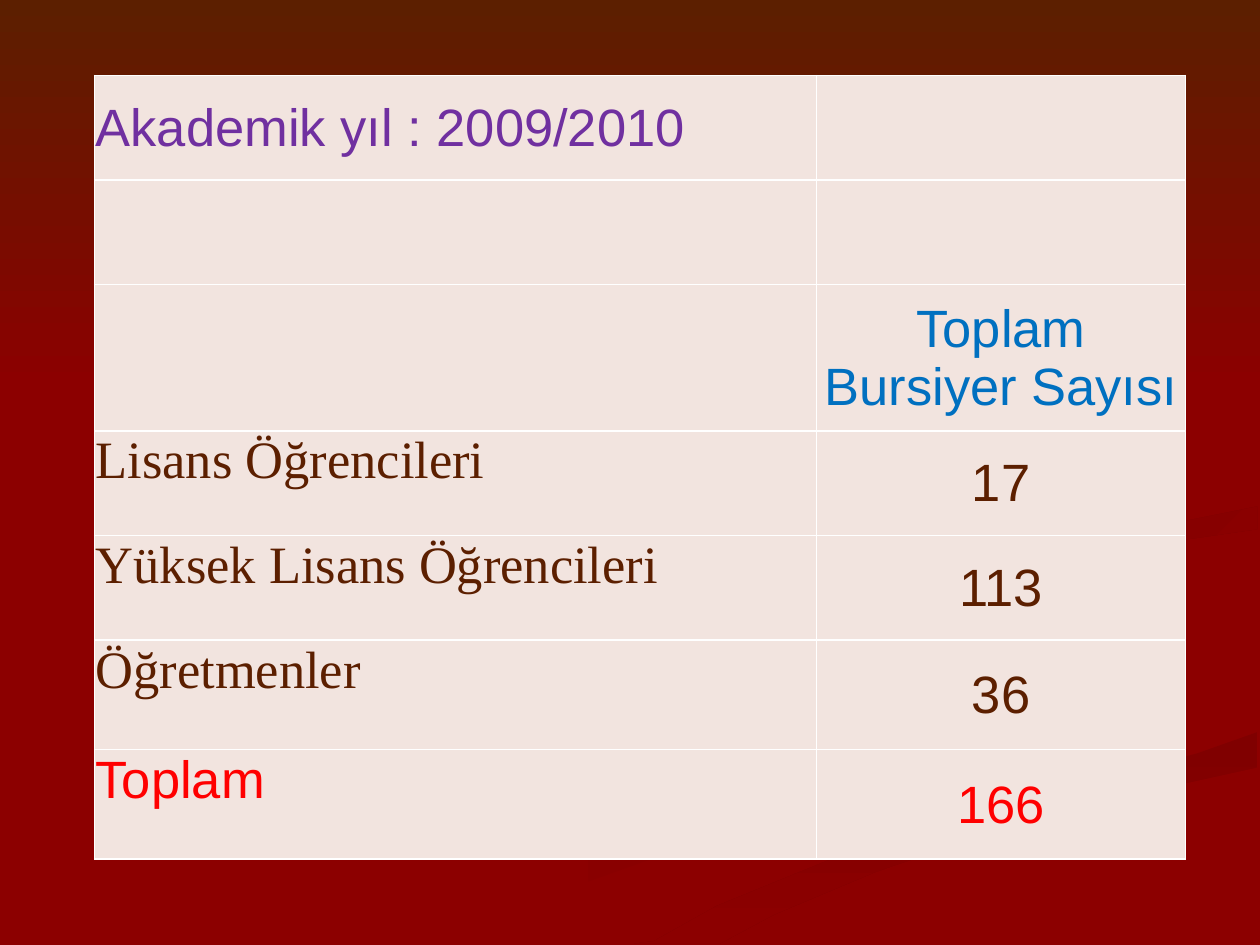
"""Scholarship holders of the academic year 2009/2010 as a table on a red wave background."""
import pptx
import pptx.util
import pptx.dml.color
import pptx.enum.text
import pptx.oxml
import pptx.oxml.ns

COLORS = {"red": "8C0000", "brown": "5C1F00", "dark": "800000", "deep": "860000", "cell": "F2E4DF",
          "white": "FFFFFF", "purple": "7030A0", "blue": "0070C0", "total": "FF0000"}
ROWS = [
    (0.83, ("Akademik yıl : 2009/2010", "Arial", "purple"), None),
    (0.83, None, None),
    (1.16, None, ("Toplam Bursiyer Sayısı", "Arial", "blue")),
    (0.83, ("Lisans Öğrencileri", "Times New Roman", "brown"), ("17", "Arial", "brown")),
    (0.83, ("Yüksek Lisans Öğrencileri", "Times New Roman", "brown"), ("113", "Arial", "brown")),
    (0.87, ("Öğretmenler", "Times New Roman", "brown"), ("36", "Arial", "brown")),
    (0.87, ("Toplam", "Arial", "total"), ("166", "Arial", "total")),
]
COLS = (5.73, 2.93)
WAVES = [
    ("red", "deep", 0, [(3, 7.49), (3.76, 7.07), (4.58, 6.74), (5.39, 6.49), (6.52, 6.2), (7.49, 5.94),
                        (7.86, 5.66), (8, 5.81), (7.8, 6.05), (6.76, 6.34), (5.64, 6.65), (4.66, 7),
                        (3.61, 7.49)]),
    ("dark", "red", 270, [(5.03, 7.49), (5.71, 7.49), (6.14, 7.26), (6.95, 6.92), (7.85, 6.61), (9.03, 6.3),
                          (9.98, 6.09), (9.98, 5.81), (9.5, 5.98), (8.67, 6.2), (7.64, 6.47), (6.62, 6.81),
                          (5.69, 7.19), (5.19, 7.47)]),
    ("dark", "red", 315, [(7.81, 4.6), (7.91, 4.78), (8.26, 4.96), (8.05, 4.76), (8.16, 4.59), (8.59, 4.43),
                          (9.36, 4.29), (9.98, 4.2), (9.98, 4.02), (9.33, 4.15), (8.65, 4.24), (8.1, 4.37)]),
    ("brown", "red", 270, [(0, 0), (0, 3.08), (10, 3.08), (10, 0)]),
]


def rgb(name):
    return pptx.dml.color.RGBColor.from_string(COLORS[name])


def add_wave(s, start, end, angle, points):
    pts = [(pptx.util.Inches(x), pptx.util.Inches(y)) for x, y in points]
    builder = s.shapes.build_freeform(*pts[0])
    builder.add_line_segments(pts[1:], close=True)
    sp = builder.convert_to_shape()
    sp.shadow.inherit = False
    sp.line.fill.background()
    sp.fill.gradient()
    sp.fill.gradient_angle = angle
    for stop, name in zip(sp.fill.gradient_stops, (start, end)):
        stop.color.rgb = rgb(name)


def format_cell(cell, content, col):
    cell.fill.solid()
    cell.fill.fore_color.rgb = rgb("cell")
    for i, side in enumerate(("lnL", "lnR", "lnT", "lnB")):
        cell._tc.get_or_add_tcPr().insert(i, pptx.oxml.parse_xml(
            f'<a:{side} {pptx.oxml.ns.nsdecls("a")} w="12700"><a:solidFill>'
            f'<a:srgbClr val="{COLORS["white"]}"/></a:solidFill></a:{side}>'))
    if content is None:
        return
    text, font, color = content
    cell.margin_left = cell.margin_right = cell.margin_top = pptx.util.Inches(0.01)
    cell.margin_bottom = 0
    p = cell.text_frame.paragraphs[0]
    p.text = text
    p.font.size, p.font.name, p.font.color.rgb = pptx.util.Pt(30), font, rgb(color)
    if col == 1:
        p.alignment = pptx.enum.text.PP_ALIGN.CENTER
    if col == 1 or color == "purple":
        cell.vertical_anchor = pptx.enum.text.MSO_ANCHOR.MIDDLE


def main():
    prs = pptx.Presentation()
    prs.slide_width, prs.slide_height = pptx.util.Inches(10), pptx.util.Inches(7.5)
    s = prs.slides.add_slide(prs.slide_layouts[6])
    s.background.fill.solid()
    s.background.fill.fore_color.rgb = rgb("red")
    for wave in WAVES:
        add_wave(s, *wave)
    size = (sum(COLS), sum(row[0] for row in ROWS))
    table = s.shapes.add_table(len(ROWS), len(COLS), *map(pptx.util.Inches, (0.75, 0.6, *size))).table
    table.first_row = table.horz_banding = False
    for column, width in zip(table.columns, COLS):
        column.width = pptx.util.Inches(width)
    for r, (height, *contents) in enumerate(ROWS):
        table.rows[r].height = pptx.util.Inches(height)
        for c, content in enumerate(contents):
            format_cell(table.cell(r, c), content, c)
    prs.save("out.pptx")


if __name__ == "__main__":
    main()
